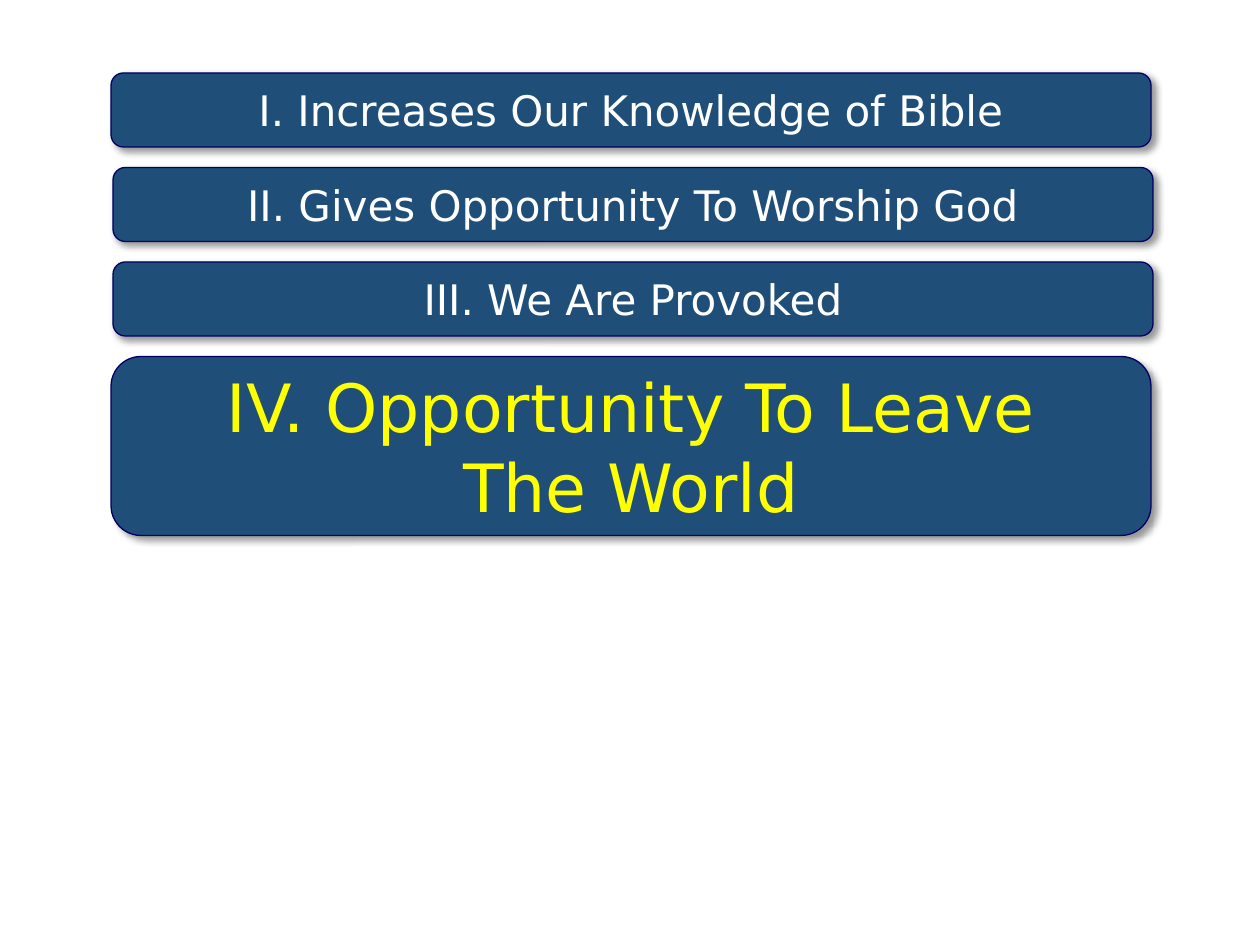
from lxml import etree
from pptx import Presentation
from pptx.dml.color import RGBColor
from pptx.enum.shapes import MSO_SHAPE
from pptx.enum.text import MSO_ANCHOR, PP_ALIGN
from pptx.oxml.ns import qn
from pptx.util import Pt

ROUND = MSO_SHAPE.ROUNDED_RECTANGLE
MIDDLE = MSO_ANCHOR.MIDDLE
CENTER = PP_ALIGN.CENTER

SCALE = 914400 / 126
FONT = "DejaVu Sans"
NAVY, EDGE = "1F4E79", "000066"
WHITE, YELLOW = "FFFFFF", "FFFF00"

TOP, STEP, WIDTH = 73, 94.5, 1040
LOW, TALL = 74, 179

# text, left, height, size, colour
POINTS = [
    ("I. Increases Our Knowledge of Bible", 111, LOW, 24, WHITE),
    ("II. Gives Opportunity To Worship God", 113, LOW, 24, WHITE),
    ("III. We Are Provoked", 113, LOW, 24, WHITE),
    ("IV. Opportunity To Leave\nThe World", 111, TALL, 38, YELLOW),
]


def px(n):
    return round(n * SCALE)


def rgb(code):
    return RGBColor.from_string(code)


def write(shape, text, size, color):
    frame = shape.text_frame
    frame.word_wrap = False
    frame.vertical_anchor = MIDDLE
    para = frame.paragraphs[0]
    para.alignment = CENTER
    para.text = text.replace("\n", "\v")
    for run in para.runs:
        run.font.name = FONT
        run.font.size = Pt(size)
        run.font.color.rgb = rgb(color)


def shade(shape, blur=4, dist=3, angle=45, alpha=40):
    """Cast an outer black shadow; blur and dist are in points."""
    shape.shadow.inherit = False
    effects = shape._element.spPr.find(qn("a:effectLst"))
    outer = etree.SubElement(
        effects, qn("a:outerShdw"), blurRad=str(Pt(blur)), dist=str(Pt(dist)),
        dir=str(angle * 60000), algn="tl", rotWithShape="0")
    black = etree.SubElement(outer, qn("a:srgbClr"), val="000000")
    etree.SubElement(black, qn("a:alpha"), val=str(alpha * 1000))


def add_bar(slide, left, top, height):
    bar = slide.shapes.add_shape(ROUND, px(left), px(top), px(WIDTH), px(height))
    bar.fill.solid()
    bar.fill.fore_color.rgb = rgb(NAVY)
    bar.line.color.rgb = rgb(EDGE)
    bar.line.width = Pt(0.75)
    shade(bar)
    return bar


def main():
    deck = Presentation()
    deck.slide_width, deck.slide_height = px(1260), px(945)
    slide = deck.slides.add_slide(deck.slide_layouts[6])
    for i, (text, left, height, size, color) in enumerate(POINTS):
        bar = add_bar(slide, left, TOP + i * STEP, height)
        write(bar, text, size=size, color=color)
    deck.save("out.pptx")


if __name__ == "__main__":
    main()
